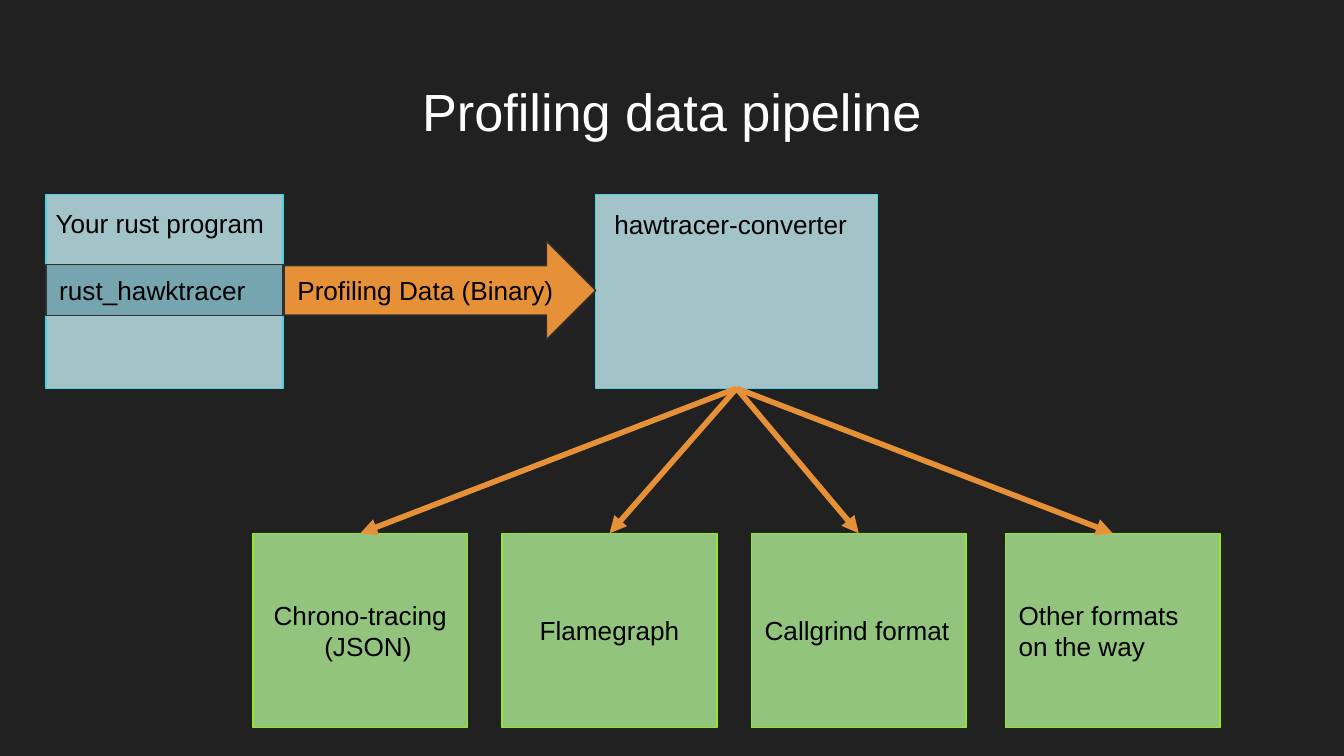
from lxml import etree
from pptx import Presentation, util as u
from pptx.dml.color import RGBColor
from pptx.enum import shapes, text
from pptx.oxml.ns import qn

TITLE = "Profiling data pipeline"
LEFT, CENTER = text.PP_ALIGN.LEFT, text.PP_ALIGN.CENTER
TOP, MIDDLE = text.MSO_ANCHOR.TOP, text.MSO_ANCHOR.MIDDLE
RECT = shapes.MSO_SHAPE.RECTANGLE
ARROW = shapes.MSO_SHAPE.RIGHT_ARROW

PALE, TEAL, CYAN, DARK = "A2C4C9", "76A5AF", "4DD0E1", "303030"
ORANGE, GREEN, LIME = "E69138", "93C47D", "94E628"

# Lengths in cm: left, top, width, height
PROGRAM = (0.87, 3.68, 4.48, 3.66)
TRACER = (0.87, 5.0, 4.48, 0.97)
CONVERTER = (11.26, 3.68, 5.32, 3.66)
DATA_ARROW = (5.37, 4.56, 5.89, 1.86)
STAGES = [
    (RECT, PROGRAM, PALE, CYAN, ""),
    (RECT, TRACER, TEAL, DARK, "rust_hawktracer"),
    (RECT, CONVERTER, PALE, CYAN, ""),
    (ARROW, DATA_ARROW, ORANGE, DARK, "Profiling Data (Binary)"),
]
CAPTIONS = [
    ((0.8, 3.68, 4.83, 1.4), "Your rust program"),
    ((11.36, 3.69, 5.13, 0.97), "hawtracer-converter"),
]
# Left edge, then lines as (wording, alignment, indent)
FORMATS = [
    (4.78, [("Chrono-tracing", CENTER, 0), ("(JSON)", LEFT, 1.1)]),
    (9.49, [("Flamegraph", CENTER, 0)]),
    (14.2, [("Callgrind format", LEFT, 0)]),
    (19.0, [("Other formats on the way", LEFT, 0)]),
]
FORMAT_TOP, FORMAT_WIDTH, FORMAT_HEIGHT = 10.08, 4.06, 3.67


def color(hex_value):
    return RGBColor.from_string(hex_value)


def cm(values):
    return [u.Cm(value) for value in values]


def write(shape, lines, anchor, size=14, ink="000000"):
    frame = shape.text_frame
    layout = {
        "word_wrap": True, "vertical_anchor": anchor,
        "margin_left": u.Cm(0.25), "margin_right": u.Cm(0.25),
        "margin_top": u.Cm(0.25), "margin_bottom": u.Cm(0.25),
    }
    for name, value in layout.items():
        setattr(frame, name, value)
    for number, (wording, alignment, indent) in enumerate(lines):
        paragraph = frame.add_paragraph() if number else frame.paragraphs[0]
        paragraph.alignment = alignment
        if indent:
            paragraph._p.get_or_add_pPr().set("marL", str(u.Cm(indent)))
        run = paragraph.add_run()
        run.text = wording
        for name, value in {"name": "Arial", "size": u.Pt(size)}.items():
            setattr(run.font, name, value)
        run.font.color.rgb = color(ink)


def add_block(slide, kind, place, fill, border, lines):
    block = slide.shapes.add_shape(kind, *cm(place))
    block.shadow.inherit = False
    block.fill.solid()
    block.fill.fore_color.rgb = color(fill)
    block.line.color.rgb = color(border)
    block.line.width = u.Pt(0.75)
    if lines:
        write(block, lines, MIDDLE)


def add_branch(slide, start, end):
    """Draw an arrow from the converter to one output format."""
    branch = slide.shapes.add_connector(
        shapes.MSO_CONNECTOR.STRAIGHT, *cm(start + end))
    branch.line.color.rgb = color(ORANGE)
    branch.line.width = u.Pt(3)
    etree.SubElement(branch.line._get_or_add_ln(), qn("a:tailEnd"), type="triangle")
    etree.SubElement(branch._element.spPr, qn("a:effectLst"))


def main():
    deck = Presentation()
    deck.slide_width, deck.slide_height = cm((25.4, 14.29))
    slide = deck.slides.add_slide(deck.slide_layouts[6])
    slide.background.fill.solid()
    slide.background.fill.fore_color.rgb = color("212121")

    title = slide.shapes.add_textbox(*cm((0.86, 1.24, 23.67, 1.6)))
    write(title, [(TITLE, CENTER, 0)], TOP, size=28, ink="FFFFFF")

    for kind, place, fill, border, label in STAGES:
        add_block(slide, kind, place, fill, border, [(label, LEFT, 0)] if label else [])
    for place, label in CAPTIONS:
        write(slide.shapes.add_textbox(*cm(place)), [(label, LEFT, 0)], TOP)

    left, top, width, height = CONVERTER
    source = (left + width / 2, top + height)
    for left, lines in FORMATS:
        place = (left, FORMAT_TOP, FORMAT_WIDTH, FORMAT_HEIGHT)
        add_block(slide, RECT, place, GREEN, LIME, lines)
        add_branch(slide, source, (left + FORMAT_WIDTH / 2, FORMAT_TOP))

    deck.save("out.pptx")


if __name__ == "__main__":
    main()
